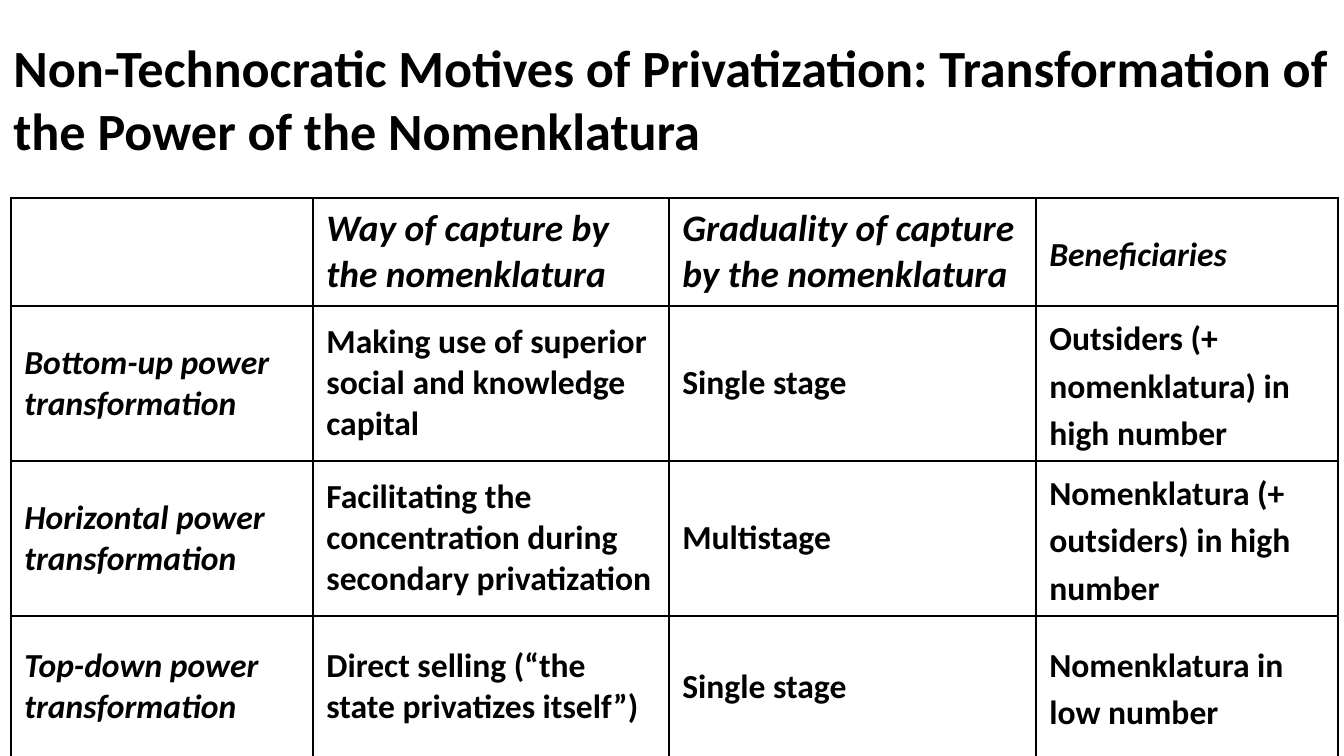
from lxml import etree
from pptx import Presentation
from pptx.dml.color import RGBColor
from pptx.enum.text import MSO_ANCHOR, MSO_AUTO_SIZE, PP_ALIGN
from pptx.oxml.ns import qn
from pptx.util import Pt

MIDDLE = MSO_ANCHOR.MIDDLE
NO_AUTOFIT = MSO_AUTO_SIZE.NONE
LEFT = PP_ALIGN.LEFT
EMU_PER_PX = 914400 / 134.4
TITLE_ONLY = 5
BLACK = "000000"

TITLE = ("Non-Technocratic Motives of Privatization: "
         "Transformation of the Power of the Nomenklatura")
TRANSFORMATIONS = [
    ["", "Way of capture by the nomenklatura",
     "Graduality of capture by the nomenklatura", "Beneficiaries"],
    ["Bottom-up power transformation",
     "Making use of superior social and knowledge capital",
     "Single stage", "Outsiders (+ nomenklatura) in high number"],
    ["Horizontal power transformation",
     "Facilitating the concentration during secondary privatization",
     "Multistage", "Nomenklatura (+ outsiders) in high number"],
    ["Top-down power transformation",
     "Direct selling (“the state privatizes itself”)",
     "Single stage", "Nomenklatura in low number"],
]
COLUMN_WIDTHS = [302, 356, 367, 302]
ROW_HEIGHTS = [108, 140, 140, 142]


def px(length):
    return round(length * EMU_PER_PX)


def color(value):
    return RGBColor.from_string(value)


class SlideBuilder:
    def __init__(self, presentation, font="Calibri", ink=BLACK):
        self.font = font
        self.ink = ink
        self.slide = presentation.slides.add_slide(
            presentation.slide_layouts[TITLE_ONLY])

    def set_text(self, frame, text, size, italic=False, spacing=None):
        frame.text = text
        frame.word_wrap = True
        paragraph = frame.paragraphs[0]
        paragraph.alignment = LEFT
        paragraph.line_spacing = spacing
        font = paragraph.font
        font.name, font.size = self.font, Pt(size)
        font.bold, font.italic = True, italic
        font.color.rgb = color(self.ink)

    def title(self, text, left, top, width, height):
        heading = self.slide.shapes.title
        heading.left, heading.top = px(left), px(top)
        heading.width, heading.height = px(width), px(height)
        frame = heading.text_frame
        frame.auto_size = NO_AUTOFIT
        frame.vertical_anchor = MIDDLE
        self.set_text(frame, text, 28)

    def border(self, cell, width=1):
        """Outline all four sides; lines must precede the fill in tcPr."""
        properties = cell._tc.get_or_add_tcPr()
        for position, side in enumerate(("a:lnL", "a:lnR", "a:lnT", "a:lnB")):
            line = etree.Element(qn(side), w=str(int(Pt(width))))
            fill = etree.SubElement(line, qn("a:solidFill"))
            etree.SubElement(fill, qn("a:srgbClr"), val=self.ink)
            properties.insert(position, line)

    def table(self, rows, left, top, widths, heights):
        """Italicise row and column headings; space out the last column."""
        grid = self.slide.shapes.add_table(
            len(rows), len(widths), px(left), px(top),
            px(sum(widths)), px(sum(heights))).table
        grid.first_row = grid.horz_banding = False
        for column, width in zip(grid.columns, widths):
            column.width = px(width)
        last = len(widths) - 1
        for r, (row, height) in enumerate(zip(rows, heights)):
            grid.rows[r].height = px(height)
            for c, text in enumerate(row):
                cell = grid.cell(r, c)
                cell.fill.background()
                cell.vertical_anchor = MIDDLE
                self.border(cell)
                self.set_text(cell.text_frame, text,
                              size=20 if r == 0 and c < last else 18,
                              italic=r == 0 or c == 0,
                              spacing=1.15 if c == last else None)


def main():
    presentation = Presentation()
    presentation.slide_width = px(1344)
    presentation.slide_height = px(756)
    builder = SlideBuilder(presentation)
    builder.title(TITLE, 0, 19, 1344, 159)
    builder.table(TRANSFORMATIONS, 11, 198, COLUMN_WIDTHS, ROW_HEIGHTS)
    presentation.save("out.pptx")


if __name__ == "__main__":
    main()
